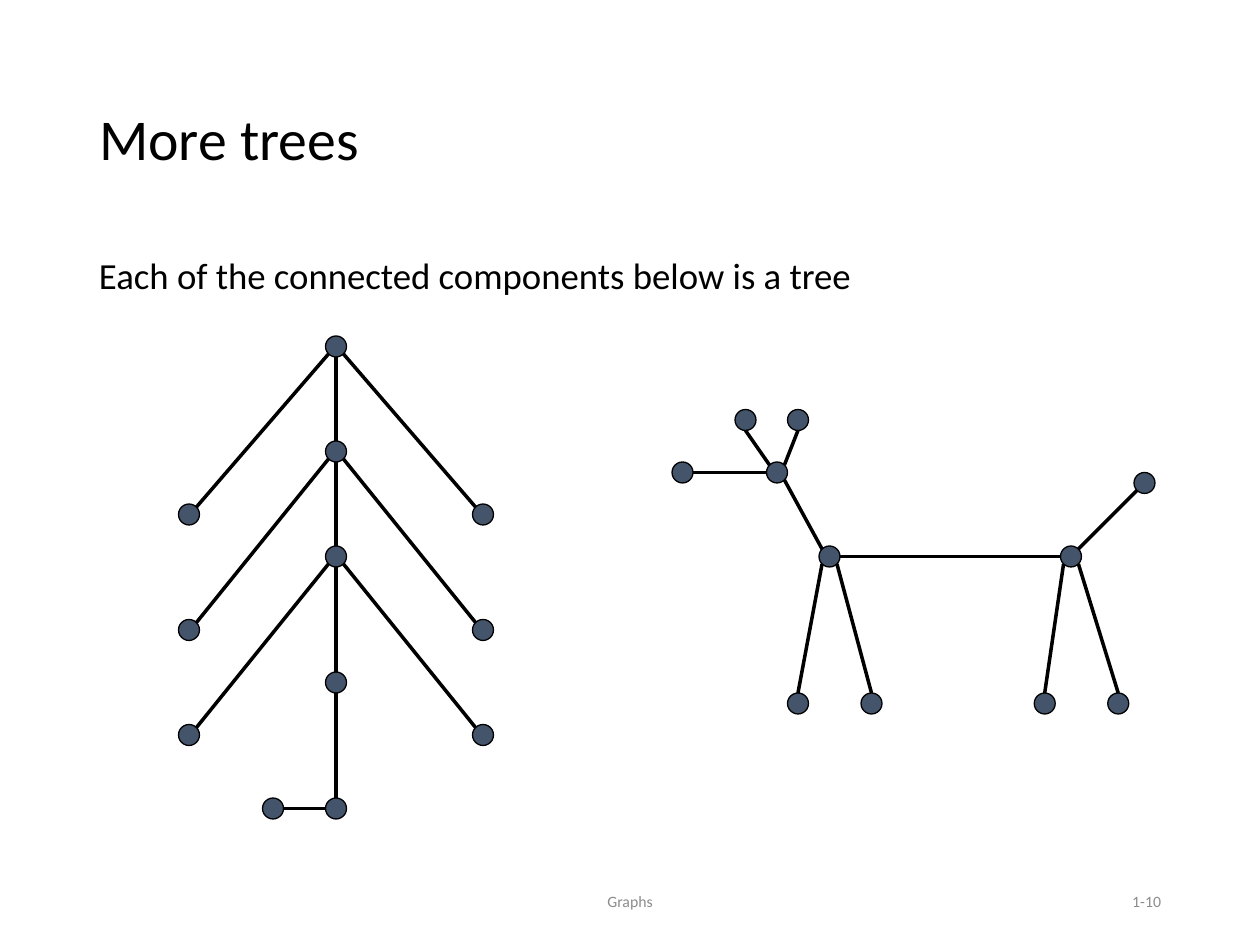
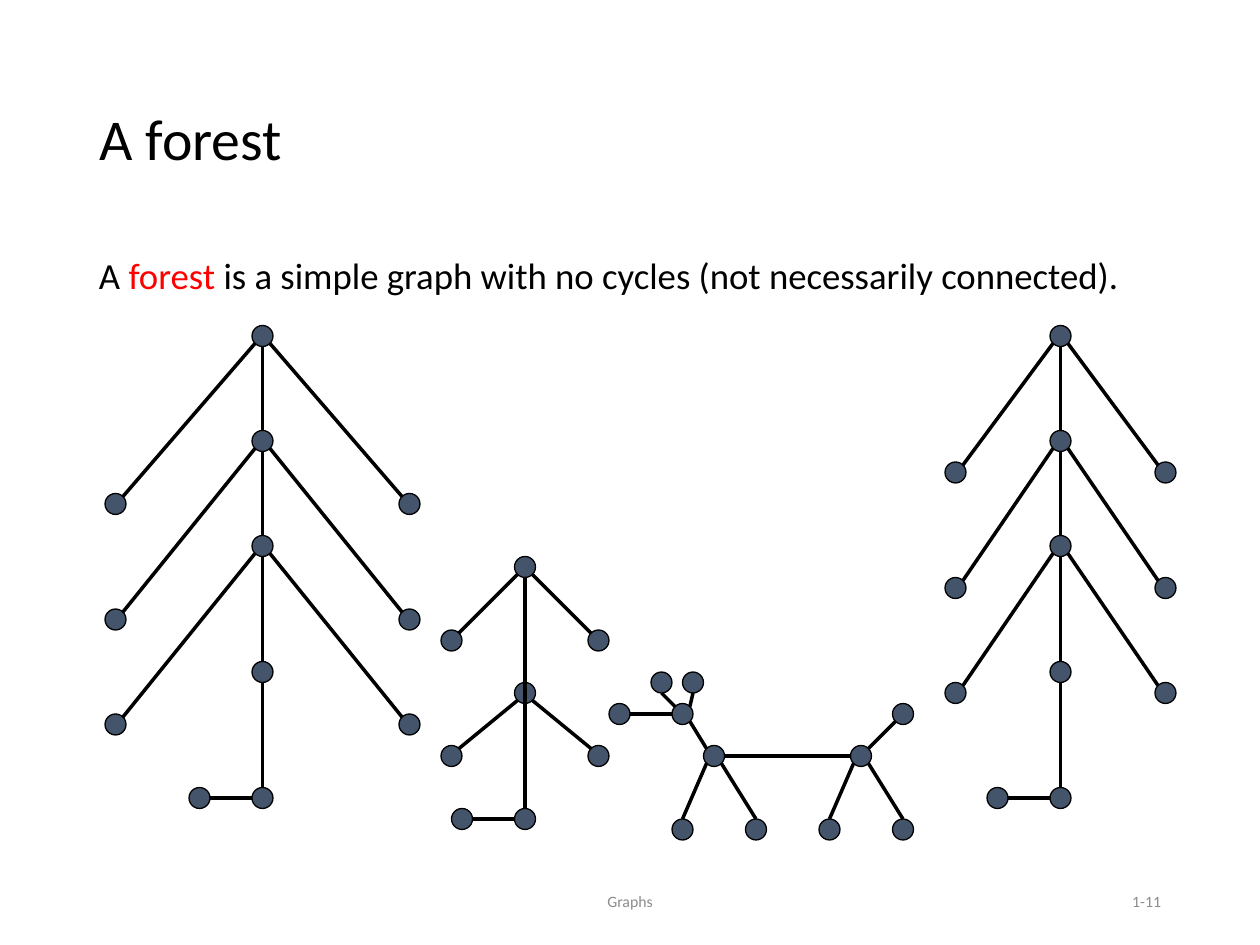
"""Build two slides on trees and forests, drawn as node-and-edge graphs."""
from lxml import etree
from pptx import Presentation
from pptx.dml.color import RGBColor
from pptx.enum import shapes, text
from pptx.oxml import ns
from pptx.util import Pt

BLACK = RGBColor(0x00, 0x00, 0x00)
RED = RGBColor(0xFF, 0x00, 0x00)
GREY = RGBColor(0x8C, 0x8C, 0x8C)
SLATE = RGBColor(0x44, 0x54, 0x6A)
FONT = "Calibri"

TITLE_BOX = (49.5, 28.75, 621, 104.5)
BODY_BOX = (49.5, 144, 621, 342.5)
FOOTER_BOX = (238.5, 500.5, 243, 28.75)
NUMBER_BOX = (508.5, 500.5, 162, 28.75)

RADIUS = 6
DIAGONAL = 4.24
SITES = {
    "N": (0, -RADIUS), "S": (0, RADIUS), "W": (-RADIUS, 0), "E": (RADIUS, 0),
    "NW": (-DIAGONAL, -DIAGONAL), "NE": (DIAGONAL, -DIAGONAL),
    "SW": (-DIAGONAL, DIAGONAL), "SE": (DIAGONAL, DIAGONAL),
}

FOOT_REACH = 36
TALL_TRUNK = (0, 60, 120, 192, 264)
LONG_TIPS = (96, 162, 222)
SHORT_TIPS = (78, 144, 204)
SMALL_TRUNK = (0, 72, 144)
SMALL_TIPS = (42, 108)

DEER_EDGES = (
    ("hip", "W", "shoulder", "E"),
    ("leg 1", "N", "shoulder", "SW"),
    ("leg 2", "N", "shoulder", "SE"),
    ("leg 3", "N", "hip", "SW"),
    ("leg 4", "N", "hip", "SE"),
    ("tail", "SW", "hip", "NE"),
    ("head", "SE", "shoulder", "NW"),
    ("nose", "E", "head", "W"),
    ("antler 1", "S", "head", "NW"),
    ("antler 2", "S", "head", "NE"),
)


def write(sp, box, runs, size, anchor, align=None):
    """Place a text shape in its box and fill one paragraph run by run."""
    sp.left, sp.top, sp.width, sp.height = map(Pt, box)
    tf = sp.text_frame
    tf.word_wrap = True
    tf.auto_size = text.MSO_AUTO_SIZE.NONE
    tf.vertical_anchor = anchor
    p = tf.paragraphs[0]
    p.alignment = align or text.PP_ALIGN.LEFT
    for words, color in runs:
        r = p.add_run()
        r.text = words
        r.font.name, r.font.size = FONT, Pt(size)
        r.font.color.rgb = color
    return p


def add_frame(prs, title, body, number):
    """Add a slide with its title, sentence, footer and slide number."""
    s = prs.slides.add_slide(prs.slide_layouts[5])
    middle = text.MSO_ANCHOR.MIDDLE
    p = write(s.shapes.title, TITLE_BOX, [(title, BLACK)], 33, middle)
    p.line_spacing = 0.9
    p = write(s.shapes.add_textbox(0, 0, 0, 0), BODY_BOX, body, 21, text.MSO_ANCHOR.TOP)
    p.line_spacing, p.space_before = 0.9, Pt(7.5)
    for box, words, align in (
        (FOOTER_BOX, "Graphs", text.PP_ALIGN.CENTER),
        (NUMBER_BOX, number, text.PP_ALIGN.RIGHT),
    ):
        write(s.shapes.add_textbox(0, 0, 0, 0), box, [(words, GREY)], 9, middle, align)
    return s


def add_node(group, center):
    """Draw one graph node around its center."""
    x, y = center
    sp = group.shapes.add_shape(
        shapes.MSO_SHAPE.OVAL, Pt(x - RADIUS), Pt(y - RADIUS), Pt(2 * RADIUS), Pt(2 * RADIUS))
    sp.shadow.inherit = False
    sp.fill.solid()
    sp.fill.fore_color.rgb = SLATE
    sp.line.color.rgb = BLACK
    sp.line.width = Pt(0.75)


def add_edge(group, start, start_site, end, end_site):
    """Draw one edge between named sites on the rims of two nodes."""
    points = [Pt(c + d) for center, site in ((start, start_site), (end, end_site))
              for c, d in zip(center, SITES[site])]
    line = group.shapes.add_connector(shapes.MSO_CONNECTOR.STRAIGHT, *points)
    line.line.color.rgb = BLACK
    line.line.width = Pt(2)
    etree.SubElement(line._element.spPr, ns.qn("a:effectLst"))


def add_fir(s, box, trunk, tips, trunk_in_front=False):
    """Draw a fir tree whose crown and base span the box from top to bottom."""
    left, top, width, height = box
    middle = left + width / 2
    spine = [(middle, top + drop) for drop in trunk]
    base = (middle, top + height)
    foot = (middle - FOOT_REACH, top + height)
    group = s.shapes.add_group_shape()
    if not trunk_in_front:
        add_edge(group, base, "N", spine[0], "S")
    for center in spine + [foot]:
        add_node(group, center)
    if trunk_in_front:
        add_edge(group, base, "N", spine[0], "S")
    add_edge(group, base, "W", foot, "E")
    for joint, drop in zip(spine, tips):
        for x, tip_site, joint_site in ((left, "NE", "SW"), (left + width, "NW", "SE")):
            tip = (x, top + drop)
            add_node(group, tip)
            add_edge(group, tip, tip_site, joint, joint_site)


def add_deer(s, box, head, shoulder, hip_x, legs, antlers, tail_y):
    """Draw a deer-shaped tree from offsets inside its box."""
    left, top, width, height = box
    joints = {
        "shoulder": shoulder, "hip": (hip_x, shoulder[1]), "head": head,
        "nose": (0, head[1]), "tail": (width, tail_y),
    }
    joints.update((f"leg {i}", (x, height)) for i, x in enumerate(legs, 1))
    joints.update((f"antler {i}", (x, 0)) for i, x in enumerate(antlers, 1))
    centers = {name: (left + x, top + y) for name, (x, y) in joints.items()}
    group = s.shapes.add_group_shape()
    for center in centers.values():
        add_node(group, center)
    for start, start_site, end, end_site in DEER_EDGES:
        add_edge(group, centers[start], start_site, centers[end], end_site)


def more_trees(prs):
    """Build the slide with a fir and a deer."""
    body = [("Each of the connected components below is a tree", BLACK)]
    s = add_frame(prs, "More trees", body, "1-10")
    add_fir(s, (108, 198, 168, 264), TALL_TRUNK, LONG_TIPS)
    add_deer(s, (390, 240, 264, 162), head=(54, 30), shoulder=(84, 78), hip_x=222,
             legs=(66, 108, 207, 249), antlers=(36, 66), tail_y=36)


def a_forest(prs):
    """Build the slide with three firs and a small deer."""
    body = [("A ", BLACK), ("forest", RED),
            (" is a simple graph with no cycles (not necessarily connected).", BLACK)]
    s = add_frame(prs, "A forest", body, "1-11")
    add_fir(s, (66, 192, 168, 264), TALL_TRUNK, LONG_TIPS)
    add_fir(s, (546, 192, 120, 264), TALL_TRUNK, SHORT_TIPS)
    add_fir(s, (258, 324, 84, 144), SMALL_TRUNK, SMALL_TIPS, trunk_in_front=True)
    add_deer(s, (354, 390, 162, 84), head=(36, 18), shoulder=(54, 42), hip_x=138,
             legs=(36, 78, 120, 162), antlers=(24, 42), tail_y=18)


def main():
    """Create the presentation and save it."""
    prs = Presentation()
    prs.slide_width, prs.slide_height = Pt(720), Pt(540)
    more_trees(prs)
    a_forest(prs)
    prs.save("out.pptx")


if __name__ == "__main__":
    main()
